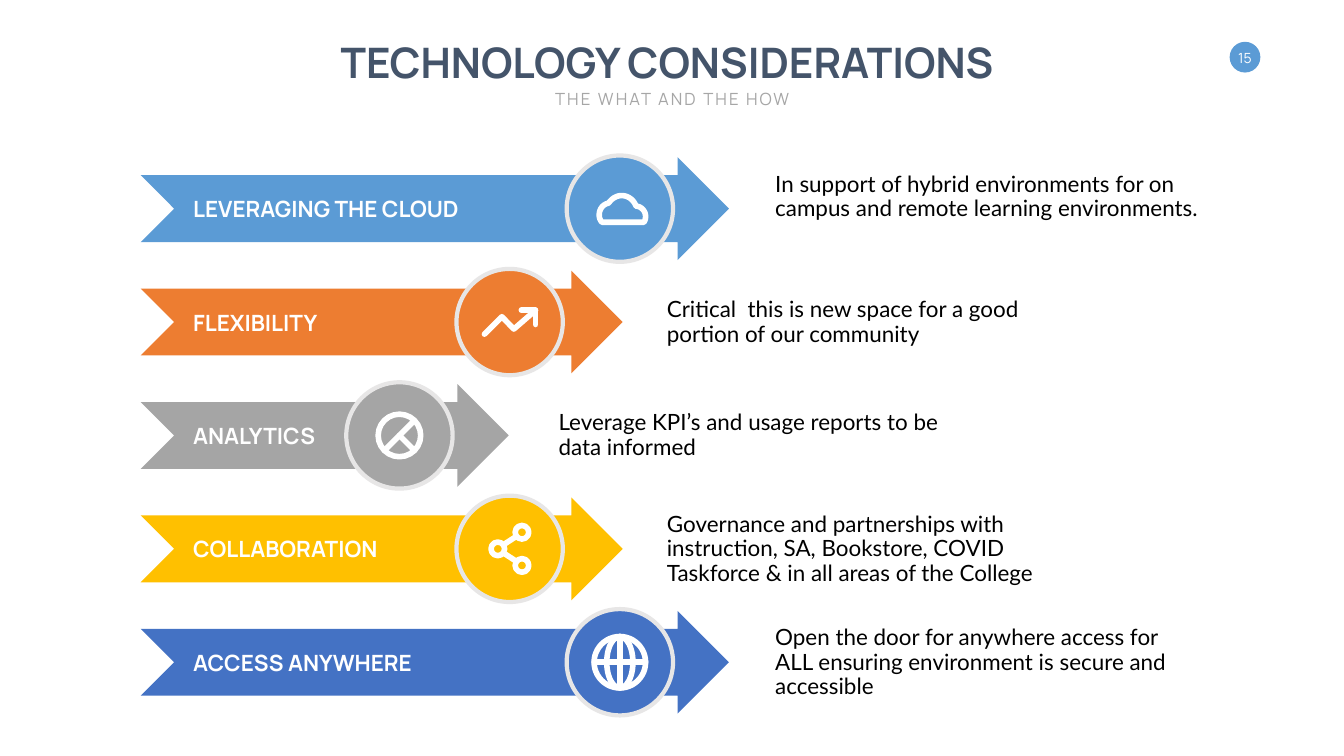
from dataclasses import dataclass
from typing import Callable

from lxml.etree import SubElement
from pptx import Presentation
from pptx.dml.color import RGBColor
from pptx.enum.shapes import MSO_CONNECTOR as Connector, MSO_SHAPE as Preset
from pptx.enum.text import MSO_ANCHOR as Anchor, MSO_AUTO_SIZE as AutoSize, PP_ALIGN as Align
from pptx.oxml.ns import qn
from pptx.util import Inches, Pt

Point = tuple[float, float]

presentation = Presentation()
presentation.slide_width = Inches(26.66)
presentation.slide_height = Inches(15)
slide = presentation.slides.add_slide(presentation.slide_layouts[6])

# The grid has 100 columns and 100 rows.
COLUMN = presentation.slide_width / 100
ROW = presentation.slide_height / 100
BADGE = Inches(2.11)
WHITE, BLUE = "FFFFFF", "5B9BD5"
FIRST_CENTRE, ROW_PITCH = 27.6, 15
ARROW_LEFT, ARROW_HEIGHT, LABEL_LEFT = 10.47, 13.6, 14
BADGE_CENTRE, BADGE_STEP = 46.12, 8.2
NOTE_LEFT, NOTE_STEP, NOTE_WIDTH = 57.31, 8.06, 32.22


def color(hex_string: str) -> RGBColor:
    return RGBColor.from_string(hex_string)


def add_filled(preset: Preset, left: float, top: float, width: float, height: float, fill: str):
    shape = slide.shapes.add_shape(preset, round(left), round(top), round(width), round(height))
    shape.shadow.inherit = False
    shape.fill.solid()
    shape.fill.fore_color.rgb = color(fill)
    shape.line.fill.background()
    return shape


def add_text(text: str, left: float, middle: float, width: float, height: float,
             size: float, text_color: str, font: str = "Manrope", bold: bool = False,
             align: Align = Align.LEFT, wrap: bool = False):
    """Add a text box centred on a grid row; lengths are in columns and rows."""
    box = slide.shapes.add_textbox(round(left * COLUMN), round((middle - height / 2) * ROW),
                                   round(width * COLUMN), round(height * ROW))
    frame = box.text_frame
    frame.word_wrap = wrap
    frame.auto_size = AutoSize.SHAPE_TO_FIT_TEXT
    frame.vertical_anchor = Anchor.MIDDLE
    paragraph = frame.paragraphs[0]
    paragraph.alignment = align
    run = paragraph.add_run()
    run.text = text
    run.font.name, run.font.size, run.font.bold = font, Pt(size), bold
    run.font.color.rgb = color(text_color)
    return box


@dataclass
class Pen:
    """Draws white strokes around a badge centre, in hundredths of the badge's diameter."""
    centre_x: float
    centre_y: float

    def place(self, point: Point) -> tuple[int, int]:
        return (round(self.centre_x + point[0] * BADGE / 100),
                round(self.centre_y + point[1] * BADGE / 100))

    def stroke(self, shape) -> None:
        shape.line.color.rgb = color(WHITE)
        shape.line.width = Pt(8)
        outline = shape.element.spPr.find(qn("a:ln"))
        outline.set("cap", "rnd")
        SubElement(outline, qn("a:round"))

    def line(self, start: Point, end: Point) -> None:
        connector = slide.shapes.add_connector(Connector.STRAIGHT, *self.place(start), *self.place(end))
        self.stroke(connector)
        SubElement(connector.element.spPr, qn("a:effectLst"))

    def ring(self, centre: Point, radius_x: float, radius_y: float) -> None:
        left, top = self.place((centre[0] - radius_x, centre[1] - radius_y))
        ring = add_filled(Preset.OVAL, left, top, radius_x * BADGE / 50, radius_y * BADGE / 50, WHITE)
        ring.fill.background()
        self.stroke(ring)

    def outline(self, points: list[Point], close: bool = False) -> None:
        builder = slide.shapes.build_freeform(*self.place(points[0]))
        builder.add_line_segments([self.place(point) for point in points[1:]], close=close)
        shape = builder.convert_to_shape()
        shape.shadow.inherit = False
        shape.fill.background()
        self.stroke(shape)


def curve(start: Point, first: Point, second: Point, end: Point, steps: int = 10) -> list[Point]:
    """Sample a cubic curve, leaving out its start."""
    points = []
    for step in range(1, steps + 1):
        t = step / steps
        weights = ((1 - t) ** 3, 3 * t * (1 - t) ** 2, 3 * t * t * (1 - t), t ** 3)
        corners = (start, first, second, end)
        points.append((sum(w * c[0] for w, c in zip(weights, corners)),
                       sum(w * c[1] for w, c in zip(weights, corners))))
    return points


def draw_cloud(pen: Pen) -> None:
    points = [(-16.8, 12.8)]
    for arc in (((-18.7, 10.7), (-19.4, 8.3), (-19.4, 5.9)),
                ((-19.4, 0.2), (-15.9, -4), (-10.7, -5.2)),
                ((-7.3, -9.7), (-3.1, -12.3), (1.7, -12.3)),
                ((7.8, -12.3), (13, -8.3), (15.2, -2.4)),
                ((20.1, -2.1), (24.2, 2.1), (24.2, 7.3)),
                ((24.2, 9.7), (23.5, 11.6), (22.5, 12.8))):
        points += curve(points[-1], *arc)
    pen.outline(points, close=True)


def draw_trend(pen: Pen) -> None:
    pen.outline([(-23.7, 11.4), (-7.3, -5), (4, 6.6), (24.4, -11.1)])
    pen.outline([(11, -11.1), (24.4, -11.1), (24.4, 2.3)])


def draw_pie(pen: Pen) -> None:
    pen.ring((0, 0), 20, 20)
    pen.line((14, -14), (-14, 14))
    pen.line((0, 0), (14, 14))


def draw_network(pen: Pen) -> None:
    pen.ring((-11.1, 0), 6.4, 6.4)
    for side in (-1, 1):
        pen.ring((11.6, side * 15.6), 6.4, 6.4)
        pen.line((-5.9, side * 3.8), (6.4, side * 11.8))


def draw_globe(pen: Pen) -> None:
    pen.ring((0, 0), 24.2, 24.2)
    pen.ring((0, 0), 12.3, 24.2)
    pen.line((-24.2, 0), (24.2, 0))
    pen.line((0, -24.2), (0, 24.2))


@dataclass
class Consideration:
    label: str
    label_width: float
    note: str
    note_lines: int
    fill: str
    indent: int
    draw_icon: Callable[[Pen], None]
    note_shift: float = 0


ARROW_LENGTHS = (43.77, 35.86, 27.38)  # by indent
CONSIDERATIONS = (
    Consideration("LEVERAGING THE CLOUD", 20.93, "In support of hybrid environments for on campus "
                  "and remote learning environments.", 2, BLUE, 0, draw_cloud, -1.6),
    Consideration("FLEXIBILITY", 10.13, "Critical  this is new space for a good portion of our community",
                  2, "ED7D31", 1, draw_trend),
    Consideration("ANALYTICS", 10.24, "Leverage KPI’s and usage reports to be data informed",
                  2, "A5A5A5", 2, draw_pie),
    Consideration("COLLABORATION", 15.08, "Governance and partnerships with instruction, SA, Bookstore, "
                  "COVID Taskforce & in all areas of the College", 3, "FFC000", 1, draw_network),
    Consideration("ACCESS ANYWHERE", 17.44, "Open the door for anywhere access for ALL ensuring "
                  "environment is secure and accessible", 3, "4472C4", 0, draw_globe),
)


def draw_consideration(item: Consideration, middle: float) -> None:
    arrow = add_filled(Preset.NOTCHED_RIGHT_ARROW, ARROW_LEFT * COLUMN, (middle - ARROW_HEIGHT / 2) * ROW,
                       ARROW_LENGTHS[item.indent] * COLUMN, ARROW_HEIGHT * ROW, item.fill)
    arrow.adjustments[0], arrow.adjustments[1] = 0.65, 0.5
    centre_x, centre_y = (BADGE_CENTRE - item.indent * BADGE_STEP) * COLUMN, middle * ROW
    badge = add_filled(Preset.OVAL, centre_x - BADGE / 2, centre_y - BADGE / 2, BADGE, BADGE, item.fill)
    badge.line.color.rgb = color("E7E6E6")
    badge.line.width = Pt(6)
    item.draw_icon(Pen(centre_x, centre_y))
    add_text(item.label, LABEL_LEFT, middle, item.label_width, 4.27, 32, WHITE, bold=True)
    note = add_text(item.note, NOTE_LEFT - item.indent * NOTE_STEP, middle + item.note_shift, NOTE_WIDTH,
                    0.67 + 3.27 * item.note_lines, 32, "000000", font="Lato", wrap=True)
    paragraph = note.text_frame.paragraphs[0]
    paragraph.line_spacing, paragraph.space_before = Pt(35), Pt(6.4)


add_filled(Preset.OVAL, 91.49 * COLUMN, 5.53 * ROW, Inches(0.61), Inches(0.61), BLUE)
number = add_text("15", 91.86, 7.6, 1.54, 2.27, 20, WHITE, align=Align.CENTER).text_frame
number.margin_left = number.margin_right = number.margin_top = number.margin_bottom = 0
add_text("TECHNOLOGY CONSIDERATIONS", 24.2, 8.17, 50.86, 7.4, 60, "44546A", bold=True, align=Align.CENTER)
subtitle = add_text("THE WHAT AND THE HOW", 40.55, 13.13, 18.94, 3.33, 24, "A6A6A6", align=Align.CENTER)
subtitle.text_frame.paragraphs[0].runs[0].font._element.set("spc", "300")
for index, consideration in enumerate(CONSIDERATIONS):
    draw_consideration(consideration, FIRST_CENTRE + index * ROW_PITCH)

presentation.save("out.pptx")
